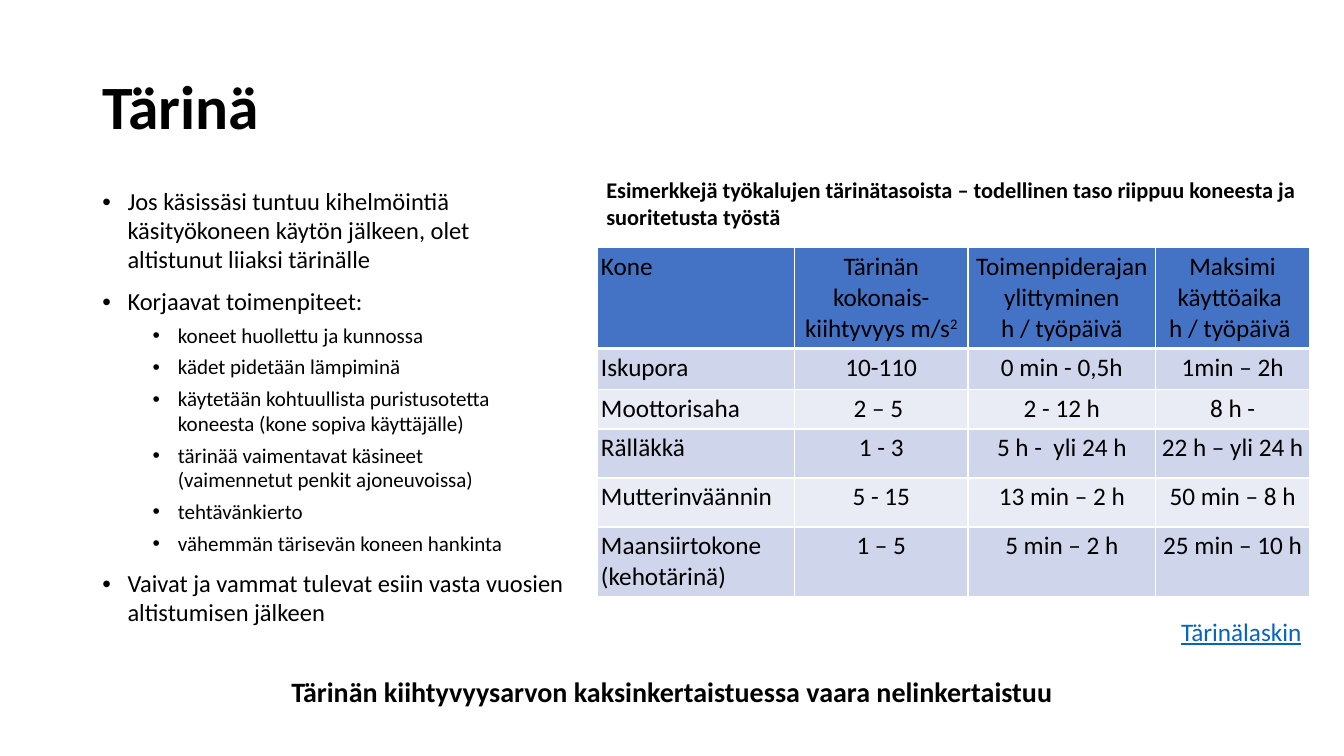
"""Build the slide on hand-arm vibration with a table of tool vibration levels."""
from lxml.etree import SubElement
from pptx import Presentation
from pptx.dml.color import RGBColor as RGB
from pptx.enum.text import MSO_ANCHOR as ANCHOR, PP_ALIGN as ALIGN
from pptx.oxml import parse_xml
from pptx.oxml.ns import nsdecls, qn
from pptx.util import Pt

THEME = {
    "font": "Calibri",
    "black": RGB(0, 0, 0),
    "link": RGB(0x05, 0x63, 0xC1),
    "header": RGB(0x44, 0x72, 0xC4),
    "bands": (RGB(0xCF, 0xD5, 0xEA), RGB(0xE9, 0xEB, 0xF5)),
    "border": "FFFFFF",
    "title": 44, "closing": 20, "cell": 18, "caption": 16, "levels": (17.5, 15),
}


def write(p, text, size, color="black", align=ALIGN.LEFT, **font):
    """Fill one paragraph and format its runs."""
    p.text = text
    p.alignment = align
    for r in p.runs:
        r.font.color.rgb = THEME[color]
        values = {"name": THEME["font"], "size": Pt(size), "bold": False, **font}
        for key, value in values.items():
            setattr(r.font, key, value)


def text_box(left, top, width, height, wrap=True):
    """Add an empty text box and return its text frame."""
    tf = s.shapes.add_textbox(Pt(left), Pt(top), Pt(width), Pt(height)).text_frame
    tf.word_wrap = wrap
    return tf


prs = Presentation()
prs.slide_width, prs.slide_height = Pt(960), Pt(540)
s = prs.slides.add_slide(prs.slide_layouts[5])

title = s.shapes.title
for key, value in {"left": 66, "top": 26, "width": 828, "height": 104.4}.items():
    setattr(title, key, Pt(value))
title.text_frame.vertical_anchor = ANCHOR.MIDDLE
p = title.text_frame.paragraphs[0]
write(p, "Tärinä", THEME["title"], bold=True)
p.line_spacing = 0.9

tf = text_box(66, 478, 828, 32)
write(tf.paragraphs[0], "Tärinän kiihtyvyysarvon kaksinkertaistuessa vaara nelinkertaistuu",
      THEME["closing"], align=ALIGN.CENTER, bold=True)
tf = text_box(836.5, 436.5, 101.5, 29, wrap=False)
write(tf.paragraphs[0], "Tärinälaskin", THEME["cell"], "link", underline=True)
tf = text_box(426, 122.5, 509, 46)
write(tf.paragraphs[0],
      "Esimerkkejä työkalujen tärinätasoista – todellinen taso riippuu koneesta ja suoritetusta työstä",
      THEME["caption"], bold=True)

bullets = [
    (0, "Jos käsissäsi tuntuu kihelmöintiä käsityökoneen käytön jälkeen, olet altistunut liiaksi tärinälle"),
    (0, "Korjaavat toimenpiteet:"),
    (1, "koneet huollettu ja kunnossa"),
    (1, "kädet pidetään lämpiminä"),
    (1, "käytetään kohtuullista puristusotetta koneesta (kone sopiva käyttäjälle)"),
    (1, "tärinää vaimentavat käsineet \v(vaimennetut penkit ajoneuvoissa)"),
    (1, "tehtävänkierto"),
    (1, "vähemmän tärisevän koneen hankinta"),
    (0, "Vaivat ja vammat tulevat esiin vasta vuosien altistumisen jälkeen"),
]
tf = text_box(66, 130.4, 348, 342.6)
for i, (level, text) in enumerate(bullets):
    p = tf.add_paragraph() if i else tf.paragraphs[0]
    write(p, text, THEME["levels"][level])
    p.level = level
    p.line_spacing = 0.98
    p.space_before = Pt((10, 5)[level])
    pPr = p._p.get_or_add_pPr()
    pPr.set("marL", str(Pt((18, 54)[level])))
    pPr.set("indent", str(-Pt(18)))
    SubElement(pPr, qn("a:buFont"), typeface="Arial")
    SubElement(pPr, qn("a:buChar"), char="•")

rows = [
    ("Kone", "Tärinän kokonais-kiihtyvyys m/s", "Toimenpiderajan ylittyminen\nh / työpäivä",
     "Maksimi käyttöaika \vh / työpäivä "),
    ("Iskupora", "10-110", "0 min - 0,5h", "1min – 2h"),
    ("Moottorisaha", "2 – 5 ", "2 - 12 h", "8 h -"),
    ("Rälläkkä", "1 - 3", "5 h -  yli 24 h", "22 h – yli 24 h"),
    ("Mutterinväännin", "5 - 15", "13 min – 2 h", "50 min – 8 h"),
    ("Maansiirtokone (kehotärinä)", "1 – 5", "5 min – 2 h", "25 min – 10 h"),
]
widths = (141, 124, 134, 110)
heights = (72, 29.5, 28, 35, 35, 49.5)
table = s.shapes.add_table(len(rows), len(widths), Pt(426.5), Pt(177),
                           Pt(sum(widths)), Pt(sum(heights))).table
table.first_row = table.horz_banding = False
for column, width in zip(table.columns, widths):
    column.width = Pt(width)
for row, height in zip(table.rows, heights):
    row.height = Pt(height)

for i, texts in enumerate(rows):
    for j, text in enumerate(texts):
        cell = table.cell(i, j)
        for side in ("left", "right", "top", "bottom"):
            setattr(cell, f"margin_{side}", Pt(2.8))
        cell.fill.solid()
        cell.fill.fore_color.rgb = THEME["bands"][(i - 1) % 2] if i else THEME["header"]
        for k, line in enumerate(text.split("\n")):
            p = cell.text_frame.add_paragraph() if k else cell.text_frame.paragraphs[0]
            write(p, line, THEME["cell"], align=ALIGN.CENTER if j else ALIGN.LEFT)
        tcPr = cell._tc.get_or_add_tcPr()
        for k, side in enumerate("LRTB"):
            weight = Pt(3 if i == 0 and side == "B" else 1)
            tcPr.insert(k, parse_xml(
                f'<a:ln{side} {nsdecls("a")} w="{weight}"><a:solidFill>'
                f'<a:srgbClr val="{THEME["border"]}"/></a:solidFill></a:ln{side}>'))

r = table.cell(0, 1).text_frame.paragraphs[0].add_run()
r.text = "2"
for key, value in {"name": THEME["font"], "size": Pt(THEME["cell"]), "bold": False}.items():
    setattr(r.font, key, value)
r.font.color.rgb = THEME["black"]
r.font._element.set("baseline", "30000")

prs.save("out.pptx")
